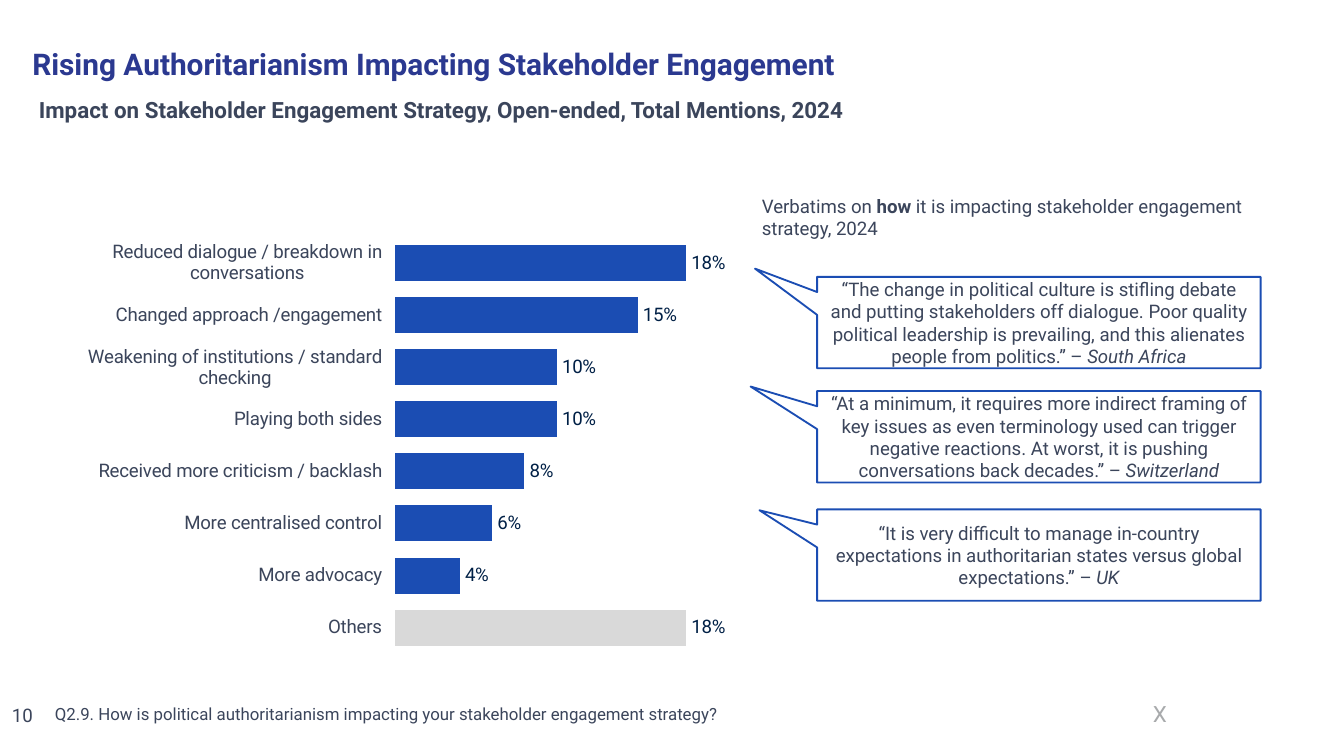
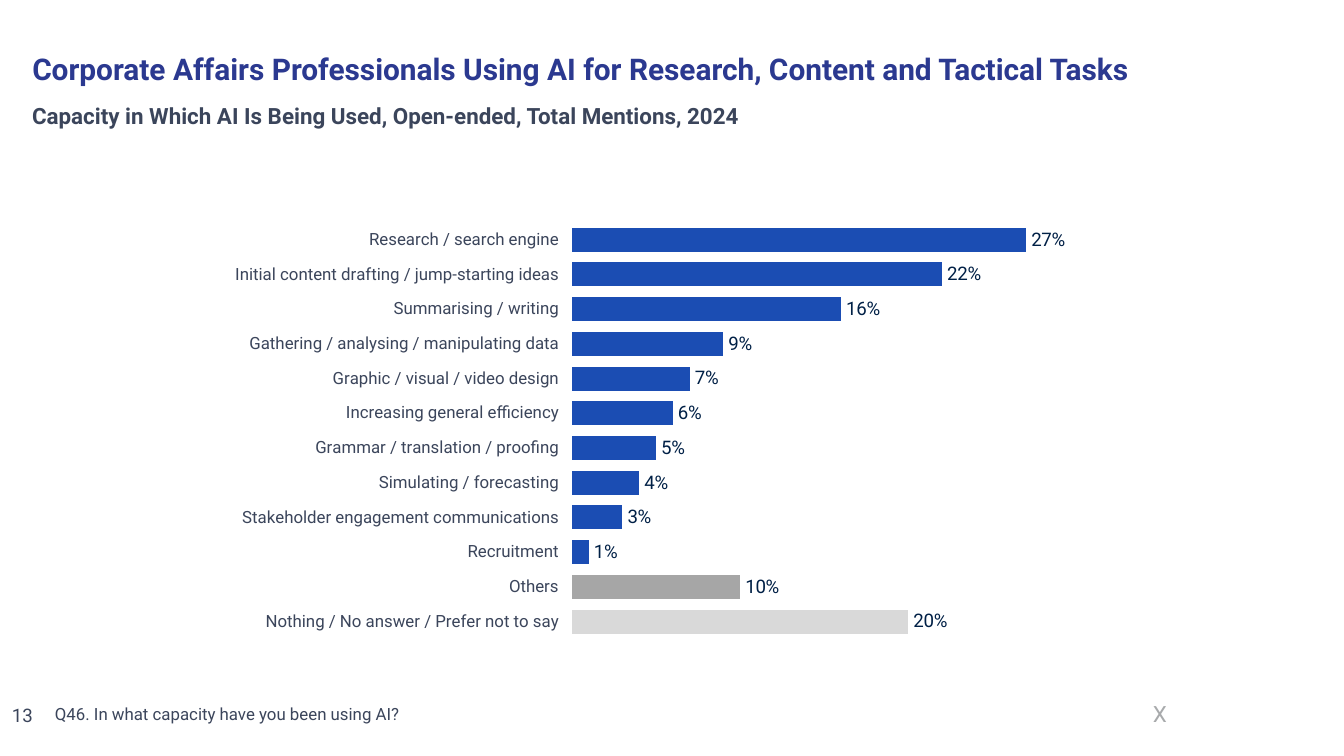
from lxml.etree import SubElement
from pptx import Presentation
from pptx.chart.data import CategoryChartData
from pptx.dml.color import RGBColor
from pptx.enum.chart import XL_CHART_TYPE, XL_LABEL_POSITION, XL_TICK_LABEL_POSITION, XL_TICK_MARK
from pptx.enum.shapes import MSO_SHAPE
from pptx.enum.text import MSO_ANCHOR, MSO_AUTO_SIZE, PP_ALIGN
from pptx.oxml.ns import qn
from pptx.util import Inches, Pt

FONT = "Roboto"
TITLE_BLUE = "2B3990"
BAR_BLUE = "1B4DB3"
TEXT = "3B455B"
LABEL = "002046"
LIGHT_GREY = "D9D9D9"
MID_GREY = "A6A6A6"
MARK_GREY = "A8AAAC"


def style_font(font, size, color, bold=None, italic=None):
    font.name = FONT
    font.size = Pt(size)
    font.color.rgb = RGBColor.from_string(color)
    font.bold = bold
    font.italic = italic


def write_text(shape, runs, size, color, align=PP_ALIGN.LEFT, anchor=MSO_ANCHOR.TOP, wrap=True):
    """Fill a shape with one paragraph; each run is (text, style), style being "", "b" or "i"."""
    frame = shape.text_frame
    frame.word_wrap = wrap
    frame.auto_size = MSO_AUTO_SIZE.NONE
    frame.vertical_anchor = anchor
    paragraph = frame.paragraphs[0]
    paragraph.alignment = align
    for text, style in runs:
        run = paragraph.add_run()
        run.text = text
        style_font(run.font, size, color, bold=style == "b", italic=style == "i")
    return paragraph


# Slide content
slides = [
    {
        "number": "10",
        "title": "Rising Authoritarianism Impacting Stakeholder Engagement",
        "title_box": (0.14, 0.32, 9.47, 0.34),
        "subtitle": "Impact on Stakeholder Engagement Strategy, Open-ended, Total Mentions, 2024",
        "subtitle_box": (0.19, 0.67, 7.01, 0.5),
        "question": "Q2.9. How is political authoritarianism impacting your stakeholder engagement strategy?",
        "question_width": 6.73,
        "chart_box": (0.38, 1.63, 5.12, 3.37),
        "category_size": 10,
        "maximum": 0.2,
        "bars": [
            ("Reduced dialogue / breakdown in conversations", 0.18),
            ("Changed approach /engagement", 0.15),
            ("Weakening of institutions / standard checking", 0.1),
            ("Playing both sides", 0.1),
            ("Received more criticism / backlash", 0.08),
            ("More centralised control", 0.06),
            ("More advocacy", 0.04),
            ("Others", 0.18),
        ],
        "grey_bars": {7: LIGHT_GREY},
    },
    {
        "number": "13",
        "title": "Corporate Affairs Professionals Using AI for Research, Content and Tactical Tasks",
        "title_box": (0.14, 0.34, 9.47, 0.37),
        "subtitle": "Capacity in Which AI Is Being Used, Open-ended, Total Mentions, 2024",
        "subtitle_box": (0.14, 0.71, 9.47, 0.3),
        "question": "Q46. In what capacity have you been using AI?",
        "question_width": 7.08,
        "chart_box": (0.26, 1.52, 7.99, 3.37),
        "category_size": 9,
        "maximum": 0.3,
        "bars": [
            ("Research / search engine", 0.27),
            ("Initial content drafting / jump-starting ideas", 0.22),
            ("Summarising / writing", 0.16),
            ("Gathering / analysing / manipulating data", 0.09),
            ("Graphic / visual / video design", 0.07),
            ("Increasing general efficiency", 0.06),
            ("Grammar / translation / proofing", 0.05),
            ("Simulating / forecasting", 0.04),
            ("Stakeholder engagement communications", 0.03),
            ("Recruitment", 0.01),
            ("Others", 0.1),
            ("Nothing / No answer / Prefer not to say", 0.2),
        ],
        "grey_bars": {10: MID_GREY, 11: LIGHT_GREY},
    },
]

# Callouts on the first slide: top, pointer position, quote, country
quotes = [
    (2.06, (-0.64, -0.59),
     "“The change in political culture is stifling debate and putting stakeholders off dialogue. "
     "Poor quality political leadership is prevailing, and this alienates people from politics.” – ",
     "South Africa"),
    (2.91, (-0.65, -0.55),
     "“At a minimum, it requires more indirect framing of key issues as even terminology used can "
     "trigger negative reactions. At worst, it is pushing conversations back decades.” – ",
     "Switzerland"),
    (3.79, (-0.63, -0.49),
     "“It is very difficult to manage in-country expectations in authoritarian states versus "
     "global expectations.” – ",
     "UK"),
]

# A 16:9 page
presentation = Presentation()
presentation.slide_width = Inches(10)
presentation.slide_height = Inches(10 * 9 / 16)
title_only = presentation.slide_layouts[5]

for content in slides:
    slide = presentation.slides.add_slide(title_only)

    # Title
    title = slide.shapes.title
    title.left, title.top, title.width, title.height = map(Inches, content["title_box"])
    paragraph = write_text(title, [(content["title"], "b")], 16, TITLE_BLUE, anchor=MSO_ANCHOR.MIDDLE)
    paragraph.line_spacing = 0.9

    # Subtitle, question, page number and corner mark
    for box, text, style, size, color, wrap in [
        (content["subtitle_box"], content["subtitle"], "b", 12, TEXT, True),
        ((0.31, 5.19, content["question_width"], 0.25), content["question"], "", 9, TEXT, True),
        ((-0.01, 5.19, 0.39, 0.28), content["number"], "", 10, TEXT, True),
        ((8.48, 5.16, 0.3, 0.3), "X", "", 12, MARK_GREY, False),
    ]:
        text_box = slide.shapes.add_textbox(*map(Inches, box))
        write_text(text_box, [(text, style)], size, color, wrap=wrap)

    # Bar chart
    chart_data = CategoryChartData(number_format="0%")
    chart_data.categories = [name for name, value in content["bars"]]
    chart_data.add_series("Series 1", [value for name, value in content["bars"]])
    chart = slide.shapes.add_chart(
        XL_CHART_TYPE.BAR_CLUSTERED, *map(Inches, content["chart_box"]), chart_data).chart
    chart.has_legend = False
    chart.has_title = False
    style_font(chart.font, 10, TEXT)

    category_axis = chart.category_axis
    category_axis.reverse_order = True
    category_axis.format.line.fill.background()
    category_axis.major_tick_mark = XL_TICK_MARK.OUTSIDE
    category_axis.tick_label_position = XL_TICK_LABEL_POSITION.LOW
    style_font(category_axis.tick_labels.font, content["category_size"], TEXT)

    value_axis = chart.value_axis
    value_axis.visible = False
    value_axis.has_major_gridlines = False
    value_axis.minimum_scale = 0
    value_axis.maximum_scale = content["maximum"]

    plot = chart.plots[0]
    plot.gap_width = 45
    plot.vary_by_categories = False
    plot.has_data_labels = True
    labels = plot.data_labels
    labels.show_value = True
    labels.number_format = "0%"
    labels.number_format_is_linked = False
    labels.position = XL_LABEL_POSITION.OUTSIDE_END
    style_font(labels.font, 10, LABEL)

    series = plot.series[0]
    series.format.fill.solid()
    series.format.fill.fore_color.rgb = RGBColor.from_string(BAR_BLUE)
    for index, color in content["grey_bars"].items():
        fill = series.points[index].format.fill
        fill.solid()
        fill.fore_color.rgb = RGBColor.from_string(color)

    # Bars fill the right half of the chart, category names the left half
    plot_area = chart._chartSpace.chart.plotArea
    for old_layout in plot_area.findall(qn("c:layout")):
        plot_area.remove(old_layout)
    layout = SubElement(plot_area, qn("c:layout"))
    plot_area.insert(0, layout)
    manual = SubElement(layout, qn("c:manualLayout"))
    for tag, value in [("layoutTarget", "inner"), ("xMode", "edge"), ("yMode", "edge"),
                       ("x", "0.5"), ("y", "0.04"), ("w", "0.47"), ("h", "0.92")]:
        SubElement(manual, qn("c:" + tag)).set("val", value)

# Verbatims beside the first chart
slide = presentation.slides[0]
heading = slide.shapes.add_textbox(Inches(5.57), Inches(1.4), Inches(3.81), Inches(0.44))
write_text(heading, [("Verbatims on ", ""), ("how", "b"),
                     (" it is impacting stakeholder engagement strategy, 2024", "")], 10, TEXT)

for top, pointer, quote, country in quotes:
    callout = slide.shapes.add_shape(
        MSO_SHAPE.RECTANGULAR_CALLOUT, Inches(6.08), Inches(top), Inches(3.3), Inches(0.68))
    callout.adjustments[0], callout.adjustments[1] = pointer
    callout.shadow.inherit = False
    callout.fill.background()
    callout.line.color.rgb = RGBColor.from_string(BAR_BLUE)
    callout.line.width = Pt(1)
    write_text(callout, [(quote, ""), (country, "i")], 10, TEXT,
               align=PP_ALIGN.CENTER, anchor=MSO_ANCHOR.MIDDLE)

presentation.save("out.pptx")
